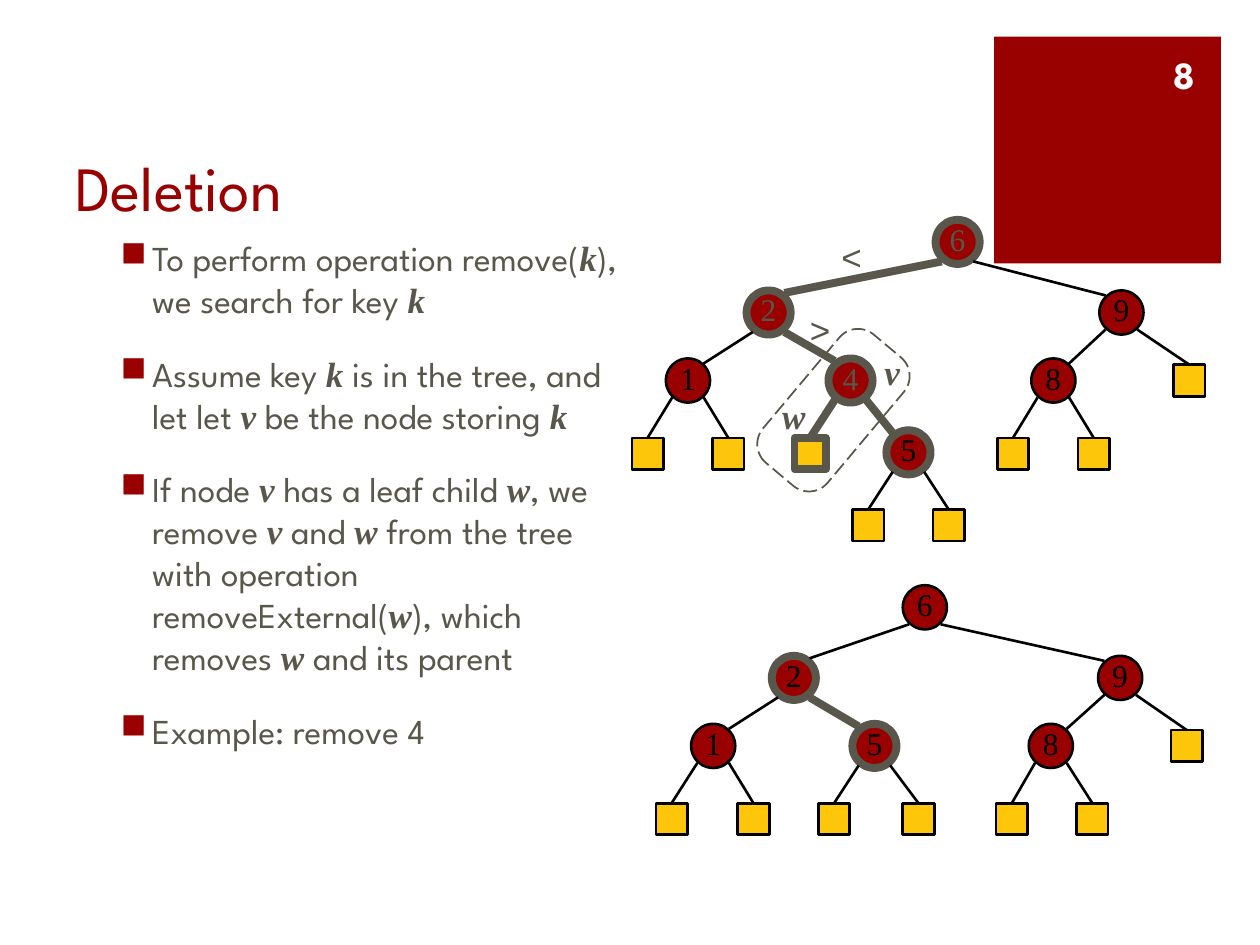
from lxml import etree
from pptx import Presentation
from pptx.dml.color import RGBColor
from pptx.enum.dml import MSO_LINE
from pptx.enum.shapes import MSO_CONNECTOR, MSO_SHAPE
from pptx.enum.text import MSO_ANCHOR, PP_ALIGN
from pptx.oxml.ns import qn
from pptx.util import Inches, Pt

RED = RGBColor(0x99, 0x00, 0x00)
GREY = RGBColor(0x59, 0x56, 0x4B)
GOLD = RGBColor(0xFE, 0xC6, 0x0B)
BLACK = RGBColor(0, 0, 0)
WHITE = RGBColor(255, 255, 255)
SANS, SERIF, SYMBOL = "League Spartan", "Times New Roman", "Arial"
TOP, MIDDLE, BOTTOM = MSO_ANCHOR.TOP, MSO_ANCHOR.MIDDLE, MSO_ANCHOR.BOTTOM
LEFT, CENTER, RIGHT = PP_ALIGN.LEFT, PP_ALIGN.CENTER, PP_ALIGN.RIGHT
OVAL, RECT, ROUNDED = MSO_SHAPE.OVAL, MSO_SHAPE.RECTANGLE, MSO_SHAPE.ROUNDED_RECTANGLE
STRAIGHT = MSO_CONNECTOR.STRAIGHT
LONG_DASH = MSO_LINE.LONG_DASH

CIRCLE, LEAF = 0.35, 0.25
EDGE_DX, THIN_DY, THICK_DY = 0.125, 0.135, 0.155
THIN, THICK = 1.5, 4.5

# Asterisks enclose variable names.
STEPS = [
    "To perform operation remove(*k*), we search for key *k*",
    "Assume key *k* is in the tree, and let let *v* be the node storing *k*",
    "If node *v* has a leaf child *w*, we remove *v* and *w* from the tree "
    "with operation removeExternal(*w*), which removes *w* and its parent",
    "Example: remove 4",
]

# Trees: centre of each node, highlighted nodes, grey keys, edges, highlighted edges.
BEFORE = {
    "nodes": {
        "6": (7.6, 1.92), "2": (6.1, 2.48), "9": (8.9, 2.48),
        "1": (5.46, 3.02), "4": (6.75, 3.02), "8": (8.36, 3.02), "5": (7.21, 3.59),
        "leaf 9R": (9.44, 3.02), "leaf 1L": (5.14, 3.6), "leaf 1R": (5.78, 3.6),
        "leaf 4L": (6.43, 3.6), "leaf 8L": (8.04, 3.6), "leaf 8R": (8.68, 3.6),
        "leaf 5L": (6.89, 4.17), "leaf 5R": (7.53, 4.17),
    },
    "marked": {"6", "2", "4", "5", "leaf 4L"},
    "grey_keys": {"6", "2", "4"},
    "edges": ["6>2", "6>9", "2>1", "2>4", "9>8", "9>leaf 9R", "1>leaf 1L", "1>leaf 1R",
              "4>leaf 4L", "4>5", "8>leaf 8L", "8>leaf 8R", "5>leaf 5L", "5>leaf 5R"],
    "search": {"6>2", "2>4", "4>5", "4>leaf 4L"},
}
AFTER = {
    "nodes": {
        "6": (7.34, 4.82), "2": (6.3, 5.38), "9": (8.89, 5.38),
        "1": (5.66, 5.92), "5": (6.94, 5.92), "8": (8.34, 5.92),
        "leaf 9R": (9.42, 5.92), "leaf 1L": (5.33, 6.5), "leaf 1R": (5.98, 6.5),
        "leaf 5L": (6.62, 6.5), "leaf 5R": (7.29, 6.5),
        "leaf 8L": (8.03, 6.5), "leaf 8R": (8.67, 6.5),
    },
    "marked": {"2", "5"},
    "grey_keys": set(),
    "edges": ["6>2", "6>9", "2>1", "2>5", "9>8", "9>leaf 9R", "1>leaf 1L", "1>leaf 1R",
              "5>leaf 5L", "5>leaf 5R", "8>leaf 8L", "8>leaf 8R"],
    "search": {"2>5"},
}

NODE_LABELS = [("v", 6.92, 2.73, 0.32), ("w", 6.11, 3.08, 0.39)]
COMPARISONS = [("<", 6.58, 1.82, 0.35), (">", 6.33, 2.4, 0.35)]


def write(frame, paragraphs, size, color, font=SANS, bold=False, italic=False,
          align=LEFT, anchor=TOP, wrap=True, bulleted=False):
    frame.word_wrap = wrap
    frame.vertical_anchor = anchor
    for index, text in enumerate(paragraphs):
        paragraph = frame.paragraphs[0] if index == 0 else frame.add_paragraph()
        paragraph.alignment = align
        if bulleted:
            paragraph.space_before = Pt(18)
            add_bullet(paragraph)
        for part, words in enumerate(text.split("*")):
            if not words:
                continue
            variable = part % 2 == 1
            run = paragraph.add_run()
            run.text = words
            run.font.size = Pt(size)
            run.font.name = SERIF if variable else font
            run.font.bold = bold or variable
            run.font.italic = italic or variable
            run.font.color.rgb = color


def add_bullet(paragraph):
    properties = paragraph._p.get_or_add_pPr()
    properties.set("marL", str(Inches(0.25)))
    properties.set("indent", str(-Inches(0.25)))
    bullet_color = etree.SubElement(properties, qn("a:buClr"))
    etree.SubElement(bullet_color, qn("a:srgbClr")).set("val", str(RED))
    etree.SubElement(properties, qn("a:buChar")).set("char", "■")


def add_text(slide, box, paragraphs, **style):
    frame = slide.shapes.add_textbox(*map(Inches, box)).text_frame
    write(frame, paragraphs, **style)


def add_outline(slide, kind, box, fill=None, line=None, width=THIN):
    shape = slide.shapes.add_shape(kind, *map(Inches, box))
    shape.shadow.inherit = False
    if fill is None:
        shape.fill.background()
    else:
        shape.fill.solid()
        shape.fill.fore_color.rgb = fill
    if line is None:
        shape.line.fill.background()
    else:
        shape.line.color.rgb = line
        shape.line.width = Pt(width)
    return shape


def add_node(slide, name, center, marked, key_color):
    is_leaf = name.startswith("leaf")
    size = LEAF if is_leaf else CIRCLE
    box = (center[0] - size / 2, center[1] - size / 2, size, size)
    node = add_outline(slide, RECT if is_leaf else OVAL, box, GOLD if is_leaf else RED,
                       GREY if marked else BLACK, THICK if marked else THIN)
    if not is_leaf:
        frame = node.text_frame
        frame.margin_left = frame.margin_right = frame.margin_top = 0
        frame.margin_bottom = Inches(0.05)
        write(frame, [name], size=18, color=key_color, font=SERIF,
              align=CENTER, anchor=MIDDLE, wrap=False)
    return node


def add_tree(slide, tree):
    centers, marked = tree["nodes"], tree["marked"]
    shapes = {
        name: add_node(slide, name, center, name in marked,
                       GREY if name in tree["grey_keys"] else BLACK)
        for name, center in centers.items()
    }
    for edge in tree["edges"]:
        parent, child = edge.split(">")
        (px, py), (cx, cy) = centers[parent], centers[child]
        dx = EDGE_DX if cx > px else -EDGE_DX
        start = (px + dx, py + (THICK_DY if parent in marked else THIN_DY))
        end = (cx - dx, cy - (THICK_DY if child in marked else THIN_DY))
        branch = slide.shapes.add_connector(STRAIGHT, *map(Inches, start + end))
        if child.startswith("leaf"):
            branch.end_connect(shapes[child], 0)
        searched = edge in tree["search"]
        branch.line.color.rgb = GREY if searched else BLACK
        branch.line.width = Pt(THICK if searched else THIN)
        etree.SubElement(branch._element.spPr, qn("a:effectLst"))


def main():
    deck = Presentation()
    deck.slide_width, deck.slide_height = Inches(10), Inches(7.5)
    slide = deck.slides.add_slide(deck.slide_layouts[6])

    add_outline(slide, RECT, (7.89, 0.29, 1.8, 1.8), RED)
    add_text(slide, (9.03, 0.39, 0.55, 0.4), ["8"], size=22, color=WHITE,
             bold=True, align=RIGHT, anchor=MIDDLE)
    add_text(slide, (0.5, 0.58, 7.12, 1.25), ["Deletion"], size=36, color=RED, anchor=BOTTOM)
    add_text(slide, (0.86, 1.83, 4.14, 4.83), STEPS, size=20, color=GREY, bulleted=True)

    add_tree(slide, BEFORE)
    add_tree(slide, AFTER)

    for label, left, top, width in NODE_LABELS:
        add_text(slide, (left, top, width, 0.43), [label], size=20, color=GREY,
                 font=SERIF, bold=True, italic=True, wrap=False)
    for sign, left, top, width in COMPARISONS:
        add_text(slide, (left, top, width, 0.43), [sign], size=20, color=GREY,
                 font=SYMBOL, wrap=False)

    removed_pair = add_outline(slide, ROUNDED, (5.95, 2.92, 1.33, 0.67), line=GREY, width=1)
    removed_pair.adjustments[0] = 0.29
    removed_pair.rotation = 310
    removed_pair.line.dash_style = LONG_DASH

    deck.save("out.pptx")


if __name__ == "__main__":
    main()
